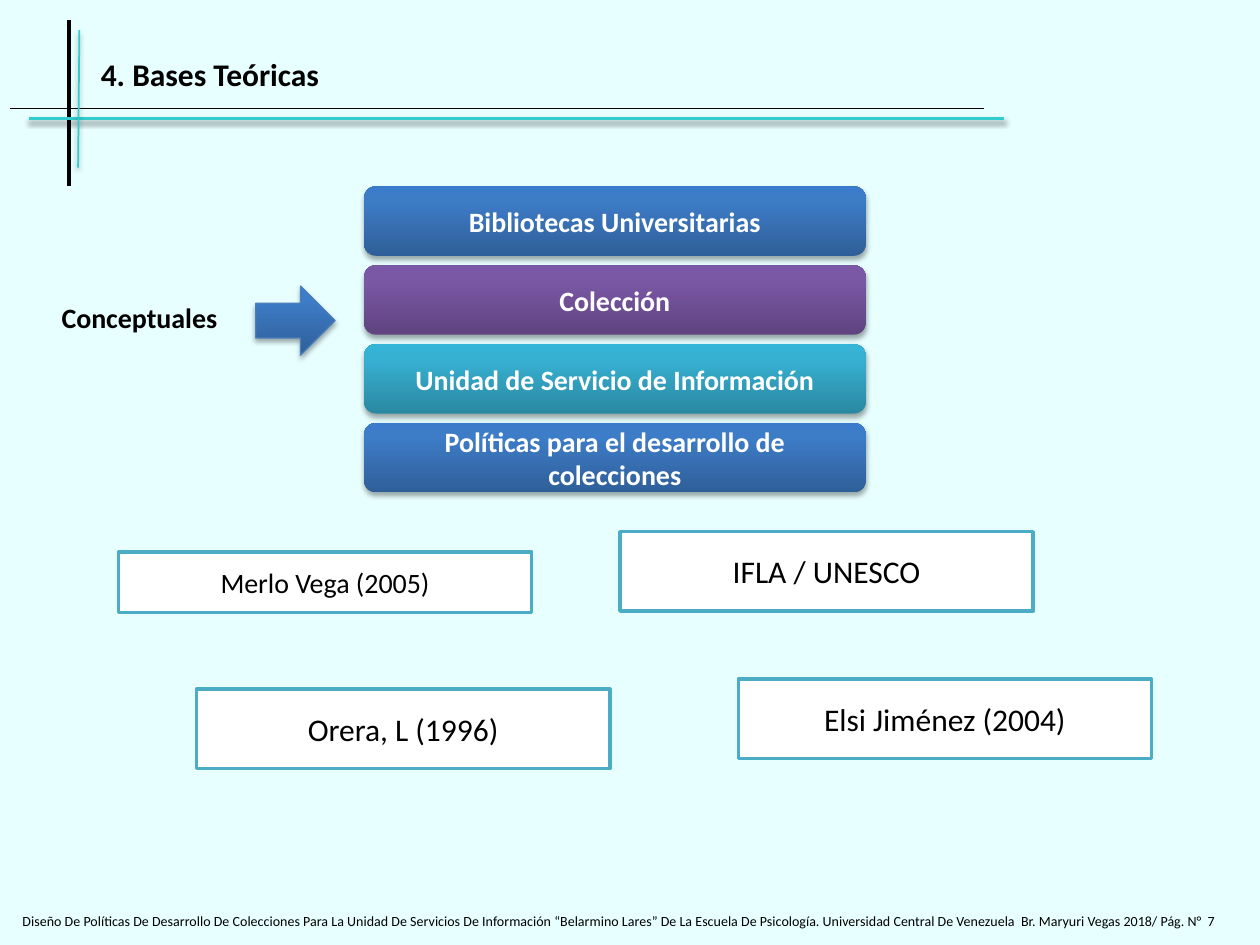
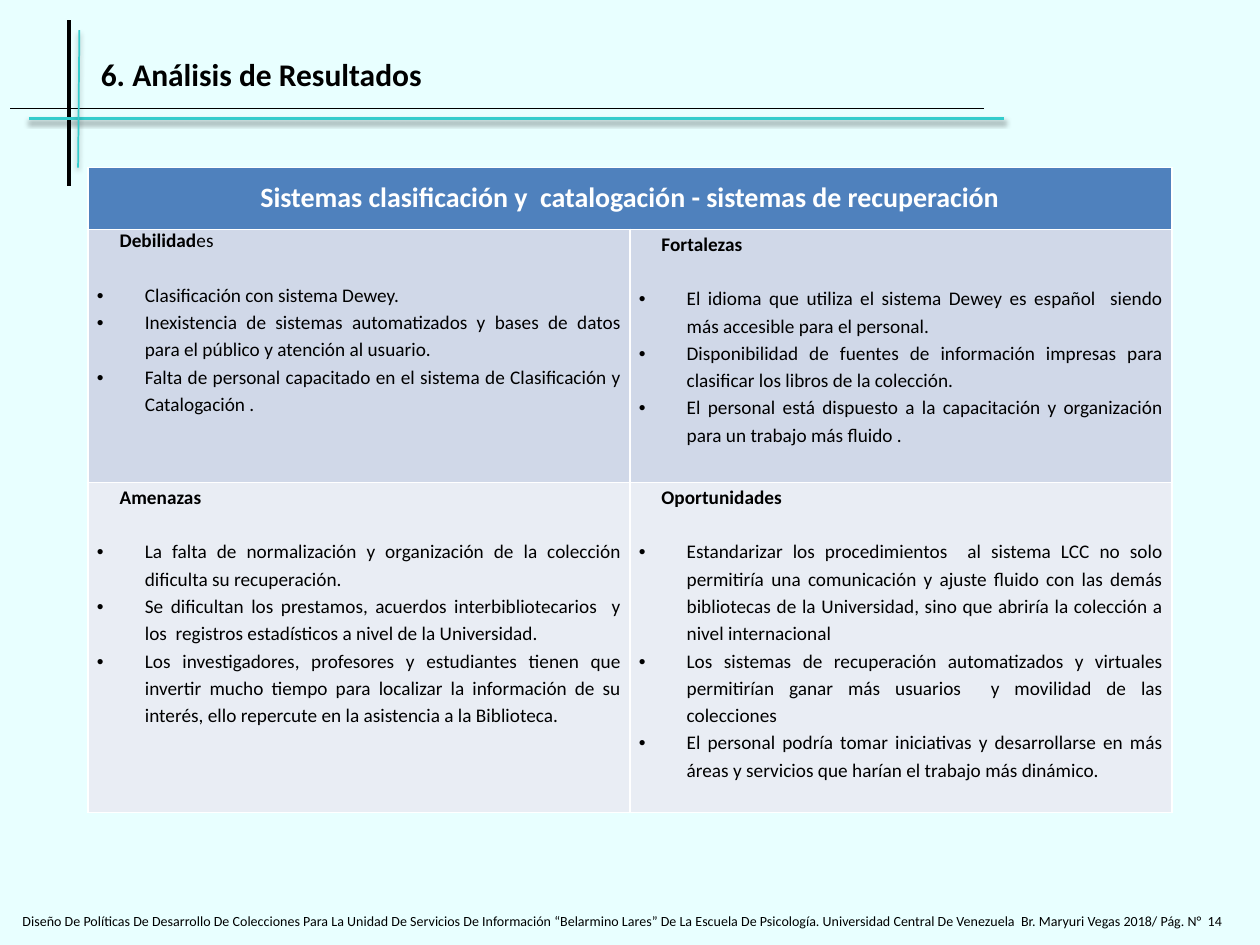
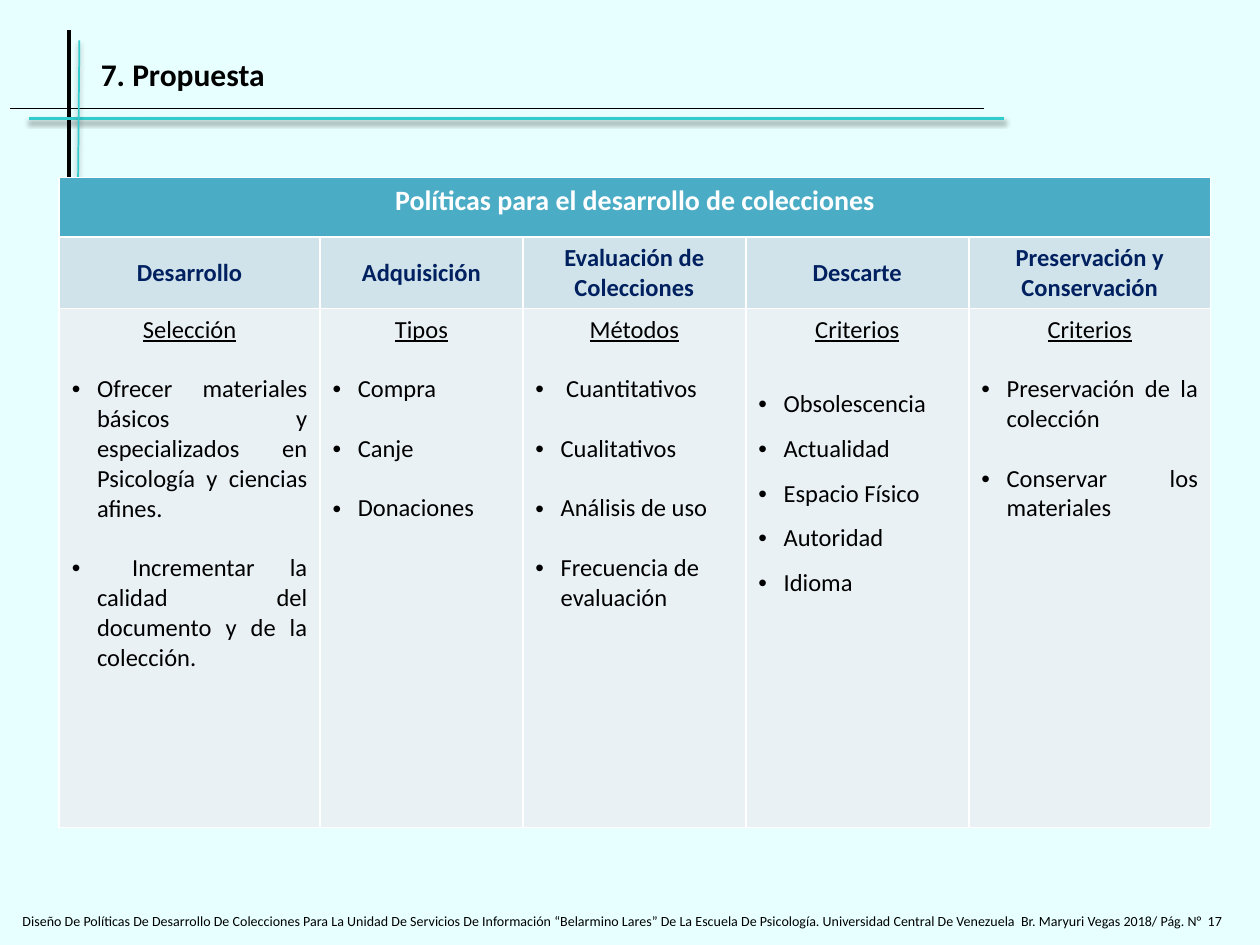
from pptx import Presentation
from pptx.dml.color import RGBColor
from pptx.enum.shapes import MSO_CONNECTOR, MSO_SHAPE
from pptx.enum.text import MSO_ANCHOR, MSO_AUTO_SIZE, PP_ALIGN
from pptx.oxml import parse_xml
from pptx.oxml.ns import nsdecls, qn
from pptx.util import Inches, Pt
from lxml.etree import SubElement

# Shared look
FONT = "Calibri"
COLORS = {
    "background": "E8FFFF", "black": "000000", "white": "FFFFFF",
    "turquoise": "33CCCC", "teal": "4BACC6", "navy": "002060",
    "arrow_line": "4B7EBC", "header_blue": "4F81BD",
    "blue_band": "D0D8E8", "blue_pale": "E9EDF4",
    "teal_band": "D0E3EA", "teal_pale": "E9F1F5",
}
GRADIENTS = {
    "blue": ("2F5F99", "3D7CC7", "3A7CCB"),
    "purple": ("5F4480", "7B58A6", "7C57A8"),
    "aqua": ("2A88A2", "37B1D2", "34B4D6"),
}
FOOTER = ("Diseño De Políticas De Desarrollo De Colecciones Para La Unidad De Servicios "
          "De Información “Belarmino Lares” De La Escuela De Psicología. Universidad "
          "Central De Venezuela  Br. Maryuri Vegas 2018/ Pág. N°  {}")

# Concepts slide
CONCEPTS = [
    ("Bibliotecas Universitarias", "blue"),
    ("Colección", "purple"),
    ("Unidad de Servicio de Información", "aqua"),
    ("Políticas para el desarrollo de colecciones", "blue"),
]
AUTHORS = [  # text, left, top, height, size
    ("Orera, L (1996)", 1.56, 5.47, 0.63, 18),
    ("IFLA / UNESCO", 4.92, 4.22, 0.63, 18),
    ("Merlo Vega (2005)", 0.94, 4.38, 0.48, 16),
    ("Elsi Jiménez (2004)", 5.86, 5.39, 0.63, 18),
]

# Results slide: bold heading, plain ending, heading line spacing, bullets
SWOT_TITLE = "Sistemas clasificación y  catalogación - sistemas de recuperación"
SWOT = [
    [("Debilidad", "es", 1.0, [
        "Clasificación con sistema Dewey.",
        "Inexistencia de sistemas automatizados y bases de datos para el público y "
        "atención al usuario.",
        "Falta de personal capacitado en el sistema de Clasificación y Catalogación ."]),
     ("Fortalezas", "", 1.15, [
        "El idioma que utiliza el sistema Dewey es español  siendo más accesible para "
        "el personal.",
        "Disponibilidad de fuentes de información impresas para clasificar los libros "
        "de la colección.",
        "El personal está dispuesto a la capacitación y organización para un trabajo "
        "más fluido ."])],
    [("Amenazas", "", 1.15, [
        "La falta de normalización y organización de la colección dificulta su "
        "recuperación.",
        "Se dificultan los prestamos, acuerdos interbibliotecarios  y los  registros "
        "estadísticos a nivel de la Universidad.",
        "Los investigadores, profesores y estudiantes tienen que invertir mucho tiempo "
        "para localizar la información de su interés, ello repercute en la asistencia "
        "a la Biblioteca."]),
     ("Oportunidades", "", 1.15, [
        "Estandarizar los procedimientos  al sistema LCC no solo permitiría una "
        "comunicación y ajuste fluido con las demás bibliotecas de la Universidad, "
        "sino que abriría la colección a nivel internacional",
        "Los sistemas de recuperación automatizados y virtuales permitirían ganar más "
        "usuarios  y movilidad de las colecciones",
        "El personal podría tomar iniciativas y desarrollarse en más áreas y servicios "
        "que harían el trabajo más dinámico."])],
]

# Proposal slide: column title, width, subtitle, alignment, line spacing, gap, bullets
POLICY_TITLE = "Políticas para el desarrollo de colecciones"
POLICIES = [
    ("Desarrollo", 2.07, "Selección", PP_ALIGN.JUSTIFY, 1.0, 17, [
        "Ofrecer materiales básicos y especializados en Psicología y ciencias afines.",
        " Incrementar la calidad del documento y de la colección."]),
    ("Adquisición", 1.61, "Tipos", PP_ALIGN.LEFT, 1.0, 17,
     ["Compra", "Canje", "Donaciones"]),
    ("Evaluación de Colecciones", 1.77, "Métodos", PP_ALIGN.LEFT, 1.0, 17,
     [" Cuantitativos", "Cualitativos", "Análisis de uso", "Frecuencia de evaluación"]),
    ("Descarte", 1.77, "Criterios", PP_ALIGN.LEFT, 1.5, 0,
     ["Obsolescencia", "Actualidad", "Espacio Físico", "Autoridad", "Idioma"]),
    ("Preservación y Conservación", 1.92, "Criterios", PP_ALIGN.JUSTIFY, 1.0, 17,
     ["Preservación de la colección", "Conservar los materiales"]),
]


def rgb(name):
    return RGBColor.from_string(COLORS[name])


# Text
def add_run(p, text, size, color="black", **fmt):
    r = p.add_run()
    r.text = text
    r.font.color.rgb = rgb(color)
    for key, value in {"name": FONT, "size": Pt(size), **fmt}.items():
        setattr(r.font, key, value)


def format_par(p, **fmt):
    for key, value in fmt.items():
        setattr(p, key, value)


def write(tf, text, size, color="black", align=PP_ALIGN.LEFT, anchor=MSO_ANCHOR.TOP, **fmt):
    tf.word_wrap = True
    tf.vertical_anchor = anchor
    p = tf.paragraphs[0]
    p.alignment = align
    add_run(p, text, size, color, **fmt)


def add_bullets(tf, items, size, indent, gap=0, **fmt):
    for i, item in enumerate(items):
        p = tf.add_paragraph()
        format_par(p, space_before=Pt(gap if i else 0), **fmt)
        pPr = p._p.get_or_add_pPr()
        pPr.set("marL", str(Inches(indent)))
        pPr.set("indent", str(-Inches(indent)))
        SubElement(pPr, qn("a:buFont")).set("typeface", "Arial")
        SubElement(pPr, qn("a:buChar")).set("char", "•")
        add_run(p, item, size)


def add_text(slide, box, text, size, **fmt):
    sp = slide.shapes.add_textbox(*map(Inches, box))
    write(sp.text_frame, text, size, **fmt)
    sp.text_frame.auto_size = MSO_AUTO_SIZE.SHAPE_TO_FIT_TEXT


# Effects and shapes
def set_effect(sp, shadow):
    inner = ""
    if shadow:
        alpha, dist = shadow
        inner = (f'<a:outerShdw blurRad="{Pt(3.1)}" dist="{Pt(dist)}" dir="5400000" '
                 f'rotWithShape="0"><a:srgbClr val="000000"><a:alpha val="{alpha * 1000}"/>'
                 '</a:srgbClr></a:outerShdw>')
    sp._element.spPr.append(parse_xml(f'<a:effectLst {nsdecls("a")}>{inner}</a:effectLst>'))


def add_line(slide, ends, color, width, shadow=None):
    line = slide.shapes.add_connector(MSO_CONNECTOR.STRAIGHT, *map(Inches, ends))
    line.line.color.rgb = rgb(color)
    line.line.width = Pt(width)
    set_effect(line, shadow)


def add_gradient_shape(slide, kind, box, gradient, outline=None):
    sp = slide.shapes.add_shape(kind, *map(Inches, box))
    if outline:
        sp.line.color.rgb = rgb(outline)
        sp.line.width = Pt(0.75)
    else:
        sp.line.fill.background()
    stops = "".join(f'<a:gs pos="{pos * 1000}"><a:srgbClr val="{hex_color}"/></a:gs>'
                    for pos, hex_color in zip((0, 80, 100), GRADIENTS[gradient]))
    sp._element.spPr.find(qn("a:prstGeom")).addnext(parse_xml(
        f'<a:gradFill {nsdecls("a")} rotWithShape="1"><a:gsLst>{stops}</a:gsLst>'
        '<a:lin ang="16200000" scaled="0"/></a:gradFill>'))
    set_effect(sp, (35, 1.8))
    return sp


# Tables
def add_grid(slide, left, top, widths, heights, fills):
    frame = slide.shapes.add_table(len(heights), len(widths), Inches(left), Inches(top),
                                   Inches(sum(widths)), Inches(sum(heights)))
    table = frame.table
    for col, width in zip(table.columns, widths):
        col.width = Inches(width)
    for row, height, fill in zip(table.rows, heights, fills):
        row.height = Inches(height)
        for cell in row.cells:
            cell.fill.solid()
            cell.fill.fore_color.rgb = rgb(fill)
    table.cell(0, 0).merge(table.cell(0, len(widths) - 1))
    return table


def write_cell(cell, text, size, color, anchor):
    cell.vertical_anchor = anchor
    p = cell.text_frame.paragraphs[0]
    p.alignment = PP_ALIGN.CENTER
    add_run(p, text, size, color, bold=True)


# Slide frame: background, crossed rules, title and footer
def new_slide(prs, title, page, drop=0):
    slide = prs.slides.add_slide(prs.slide_layouts[5])
    fill = slide.background.fill
    fill.solid()
    fill.fore_color.rgb = rgb("background")
    add_line(slide, (0.55, 0.16 + drop, 0.55, 1.48 + drop), "black", 2.25)
    add_line(slide, (0.23, 0.94, 7.97, 0.94), "turquoise", 2, (38, 1.6))
    add_line(slide, (0.08, 0.86, 7.81, 0.86), "black", 0.75)
    add_line(slide, (0.63, 0.24 + drop, 0.62, 1.33 + drop), "turquoise", 1, (35, 1.8))
    sp = slide.shapes.title
    sp.left, sp.top, sp.width, sp.height = map(Inches, (0.7, 0.39, 5.16, 0.4))
    write(sp.text_frame, title, 18, bold=True)
    sp.text_frame.auto_size = MSO_AUTO_SIZE.NONE
    add_text(slide, (0.08, 7.19, 9.81, 0.24), FOOTER.format(page), 8)
    return slide


def build_concepts(prs):
    slide = new_slide(prs, "4. Bases Teóricas", 7)
    for i, (text, gradient) in enumerate(CONCEPTS):
        sp = add_gradient_shape(slide, MSO_SHAPE.ROUNDED_RECTANGLE,
                                (2.89, 1.48 + i * 0.626, 3.98, 0.55), gradient)
        write(sp.text_frame, text, 16, "white", PP_ALIGN.CENTER, MSO_ANCHOR.MIDDLE, bold=True)
    add_text(slide, (0.39, 2.34, 1.56, 0.37), "Conceptuales", 16, bold=True)
    add_gradient_shape(slide, MSO_SHAPE.RIGHT_ARROW, (2.03, 2.27, 0.63, 0.55),
                       "blue", "arrow_line")
    for text, left, top, height, size in AUTHORS:
        sp = slide.shapes.add_shape(MSO_SHAPE.RECTANGLE,
                                    *map(Inches, (left, top, 3.28, height)))
        sp.shadow.inherit = False
        sp.fill.solid()
        sp.fill.fore_color.rgb = rgb("white")
        sp.line.color.rgb = rgb("teal")
        sp.line.width = Pt(2)
        write(sp.text_frame, text, size, align=PP_ALIGN.CENTER, anchor=MSO_ANCHOR.MIDDLE)


def build_results(prs):
    slide = new_slide(prs, "6. Análisis de Resultados", 14)
    table = add_grid(slide, 0.7, 1.33, (4.3, 4.3), (0.49, 2.01, 2.62),
                     ("header_blue", "blue_band", "blue_pale"))
    write_cell(table.cell(0, 0), SWOT_TITLE, 16, "white", MSO_ANCHOR.MIDDLE)
    for row, quadrants in enumerate(SWOT, 1):
        for col, (heading, ending, spacing, items) in enumerate(quadrants):
            cell = table.cell(row, col)
            cell.margin_left = cell.margin_right = Inches(0.07)
            cell.margin_top = cell.margin_bottom = 0
            tf = cell.text_frame
            p = tf.paragraphs[0]
            format_par(p, line_spacing=spacing, space_after=Pt(15.5))
            p._p.get_or_add_pPr().set("indent", str(Inches(0.18)))
            add_run(p, heading, 11, bold=True)
            if ending:
                add_run(p, ending, 11)
            add_bullets(tf, items, 11, 0.38, alignment=PP_ALIGN.JUSTIFY, line_spacing=1.15)


def build_proposal(prs):
    slide = new_slide(prs, "7. Propuesta", 17, drop=0.08)
    widths = [policy[1] for policy in POLICIES]
    table = add_grid(slide, 0.47, 1.41, widths, (0.47, 0.57, 4.12),
                     ("teal", "teal_band", "teal_pale"))
    write_cell(table.cell(0, 0), POLICY_TITLE, 16, "white", MSO_ANCHOR.TOP)
    for col, (name, _, subtitle, align, spacing, gap, items) in enumerate(POLICIES):
        write_cell(table.cell(1, col), name, 14, "navy", MSO_ANCHOR.MIDDLE)
        tf = table.cell(2, col).text_frame
        p = tf.paragraphs[0]
        format_par(p, alignment=PP_ALIGN.CENTER, space_after=Pt(17))
        add_run(p, subtitle, 14, underline=True)
        add_bullets(tf, items, 14, 0.2, gap, alignment=align, line_spacing=spacing)


def main():
    prs = Presentation()
    prs.slide_width, prs.slide_height = Inches(10), Inches(7.5)
    build_concepts(prs)
    build_results(prs)
    build_proposal(prs)
    prs.save("out.pptx")


if __name__ == "__main__":
    main()
